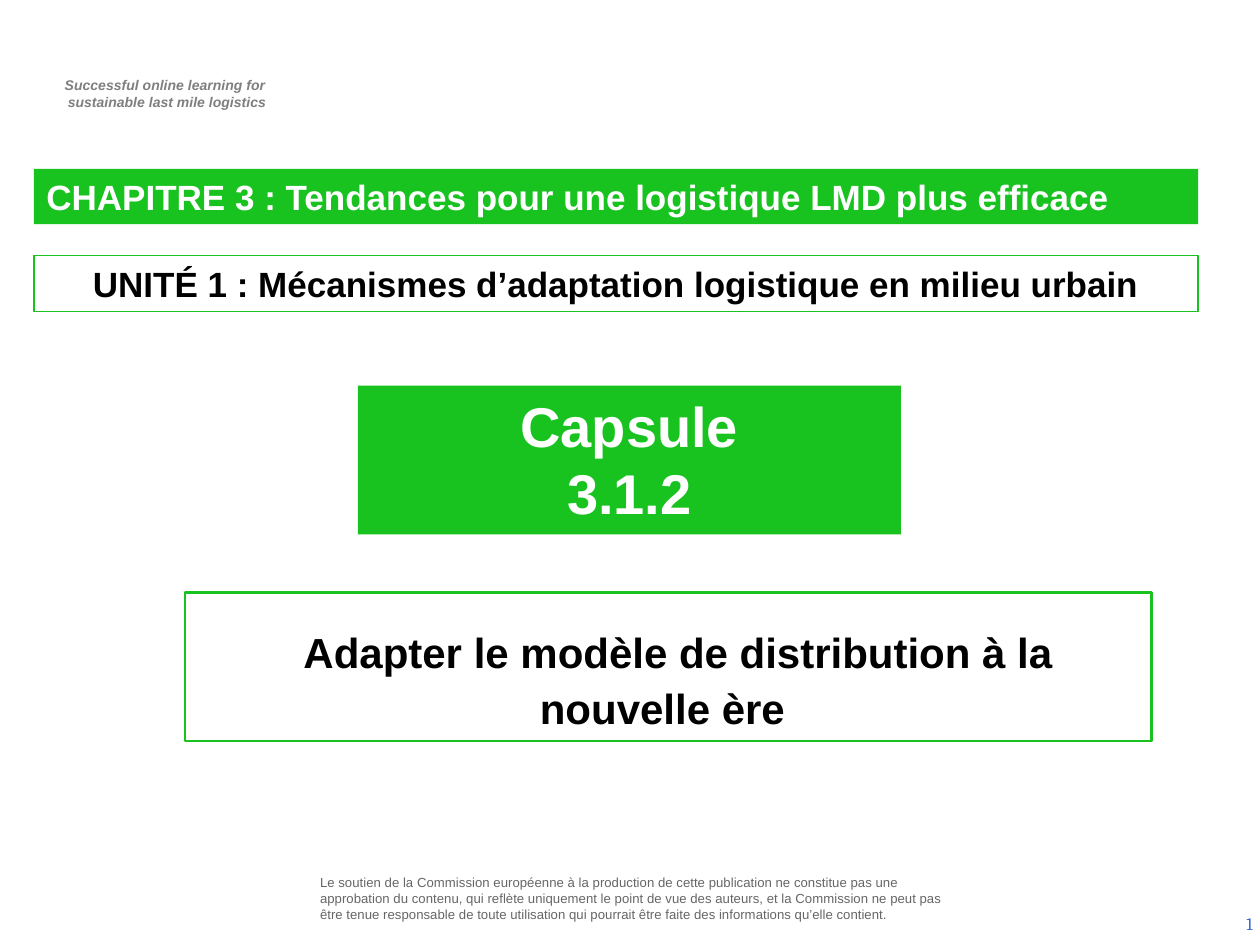
from dataclasses import dataclass

from pptx import Presentation
from pptx.dml.color import RGBColor as Color
from pptx.enum.shapes import MSO_SHAPE as Shape
from pptx.enum.text import MSO_ANCHOR as Anchor, PP_ALIGN as Align
from pptx.util import Pt


@dataclass(frozen=True)
class Theme:
    green: str = "18C320"
    white: str = "FFFFFF"
    black: str = "000000"
    tagline_gray: str = "7F7F7F"
    notice_gray: str = "666666"
    number_blue: str = "3366CC"
    font: str = "Arial"
    number_font: str = "Cambria"
    tagline_size: float = 8
    notice_size: float = 7.5
    number_size: float = 10
    heading_size: float = 20
    topic_size: float = 24
    capsule_size: float = 32
    spacer_size: float = 40


THEME = Theme()


def write_text(shape, *lines, size, color, font=THEME.font, bold=False, italic=False,
               align=Align.LEFT, anchor=Anchor.TOP, inset=(7.2, 3.6), indent=0):
    frame = shape.text_frame
    frame.word_wrap = True
    frame.vertical_anchor = anchor
    frame.margin_left = frame.margin_right = Pt(inset[0])
    frame.margin_top = frame.margin_bottom = Pt(inset[1])
    for index, line in enumerate(lines):
        paragraph = frame.paragraphs[0] if index == 0 else frame.add_paragraph()
        paragraph.alignment = align
        if indent:
            paragraph._p.get_or_add_pPr().set("marL", str(Pt(indent)))
        runs = [(line, size)] if isinstance(line, str) else line
        for text, run_size in runs:
            run = paragraph.add_run()
            run.text = text
            run.font.name = font
            run.font.size = Pt(run_size)
            run.font.bold = bold
            run.font.italic = italic
            run.font.color.rgb = Color.from_string(color)


def add_text(slide, left, top, width, height, *lines, **text_format):
    box = slide.shapes.add_textbox(Pt(left), Pt(top), Pt(width), Pt(height))
    write_text(box, *lines, **text_format)


def add_panel(slide, left, top, width, height, *lines, outline=None, **text_format):
    panel = slide.shapes.add_shape(Shape.RECTANGLE, Pt(left), Pt(top), Pt(width), Pt(height))
    panel.shadow.inherit = False
    green = Color.from_string(THEME.green)
    if outline:
        panel.fill.background()
        panel.line.color.rgb = green
        panel.line.width = Pt(outline)
    else:
        panel.fill.solid()
        panel.fill.fore_color.rgb = green
        panel.line.fill.background()
    color = THEME.black if outline else THEME.white
    write_text(panel, *lines, color=color, bold=True, **text_format)


def main():
    presentation = Presentation()
    presentation.slide_width, presentation.slide_height = Pt(720), Pt(540)
    slide = presentation.slides.add_slide(presentation.slide_layouts[6])

    add_text(slide, 20.9, 40.3, 146.2, 26.6,
             "Successful online learning for ", "sustainable last mile logistics",
             size=THEME.tagline_size, color=THEME.tagline_gray, bold=True, italic=True,
             align=Align.CENTER, indent=3)
    add_text(slide, 180, 495.4, 367.2, 36,
             "Le soutien de la Commission européenne à la production de cette publication "
             "ne constitue pas une approbation du contenu, qui reflète uniquement le point "
             "de vue des auteurs, et la Commission ne peut pas être tenue responsable de "
             "toute utilisation qui pourrait être faite des informations qu’elle contient.",
             size=THEME.notice_size, color=THEME.notice_gray,
             anchor=Anchor.MIDDLE, inset=(2.9, 2.9))
    add_text(slide, 555.1, 513.4, 167.8, 28.8, "1",
             size=THEME.number_size, color=THEME.number_blue, font=THEME.number_font,
             align=Align.RIGHT, anchor=Anchor.MIDDLE)

    add_panel(slide, 204.5, 220.3, 310.3, 85, "Capsule", "3.1.2",
              size=THEME.capsule_size, align=Align.CENTER)
    topic = [(" ", THEME.spacer_size),
             ("Adapter le modèle de distribution à la nouvelle ère ", THEME.topic_size)]
    add_panel(slide, 105.8, 338.4, 552.2, 85, topic,
              size=THEME.topic_size, align=Align.CENTER, outline=1.5)
    add_panel(slide, 19.4, 96.5, 665.3, 31.7,
              "CHAPITRE 3 : Tendances pour une logistique LMD plus efficace",
              size=THEME.heading_size)
    add_panel(slide, 19.4, 146.2, 665.3, 31.7,
              "UNITÉ 1 : Mécanismes d’adaptation logistique en milieu urbain",
              size=THEME.heading_size, align=Align.CENTER, outline=0.75)

    presentation.save("out.pptx")


if __name__ == "__main__":
    main()
